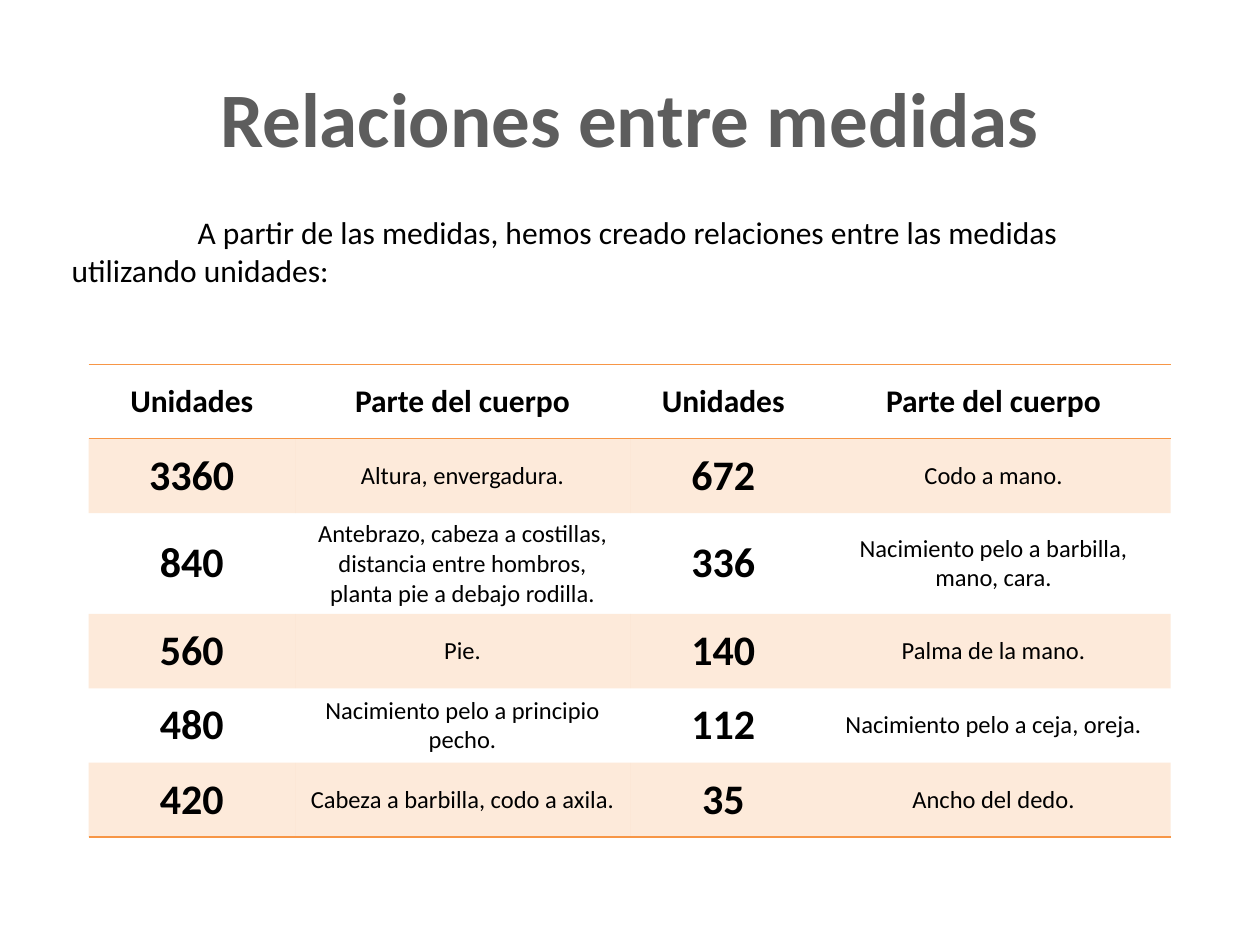
from dataclasses import dataclass
from typing import Any, NamedTuple

from lxml import etree
from pptx import Presentation
from pptx import util as u
from pptx.dml.color import RGBColor
from pptx.enum import text
from pptx.oxml import ns


@dataclass(frozen=True)
class Theme:
    font: str = "Calibri"
    title_color: str = "5D5D5D"
    ink: str = "000000"
    accent: str = "F79646"
    band_opacity: int = 20
    rule_width: float = 1
    title_size: int = 44
    body_size: int = 18
    units_size: int = 24
    part_size: int = 14


class Box(NamedTuple):
    left: float
    top: float
    width: float
    height: float

    def lengths(self) -> list[u.Length]:
        return [u.Pt(value) for value in self]


class Measure(NamedTuple):
    units: str
    part: str


THEME = Theme()
TITLE_BOX = Box(36, 21.6, 648, 90)
INTRO_BOX = Box(33.84, 118.08, 652.32, 51.12)
TABLE_BOX = Box(50.6, 208.2, 618.4, 255)
COLUMN_WIDTHS = (118, 191.5, 106.5, 202.4)
ROW_HEIGHT = 42.5
INTRO_INDENT = 72
PLAIN_TABLE_STYLE = "{2D5ABB26-0587-4C30-8999-92F81FD0307C}"

HEADING = Measure("Unidades", "Parte del cuerpo")
LARGE_MEASURES = [
    Measure("3360", "Altura, envergadura."),
    Measure("840", "Antebrazo, cabeza a costillas, distancia entre hombros, "
                   "planta pie a debajo rodilla."),
    Measure("560", "Pie."),
    Measure("480", "Nacimiento pelo a principio pecho."),
    Measure("420", "Cabeza a barbilla, codo a axila."),
]
SMALL_MEASURES = [
    Measure("672", "Codo a mano."),
    Measure("336", "Nacimiento pelo a barbilla, mano, cara."),
    Measure("140", "Palma de la mano."),
    Measure("112", "Nacimiento pelo a ceja, oreja."),
    Measure("35", "Ancho del dedo."),
]


def apply_format(target: Any, values: dict[str, Any]) -> None:
    for name, value in values.items():
        setattr(target, name, value)


def write(paragraph: Any, content: str, size: float, bold: bool = False,
          color: str = THEME.ink, alignment: Any = text.PP_ALIGN.CENTER) -> None:
    paragraph.alignment = alignment
    run = paragraph.add_run()
    run.text = content
    apply_format(run.font, {"name": THEME.font, "size": u.Pt(size), "bold": bold})
    run.font.color.rgb = RGBColor.from_string(color)


def add_title(slide: Any) -> None:
    title = slide.shapes.title
    apply_format(title, dict(zip(Box._fields, TITLE_BOX.lengths())))
    title.text_frame.vertical_anchor = text.MSO_ANCHOR.MIDDLE
    write(title.text_frame.paragraphs[0], "Relaciones entre medidas",
          THEME.title_size, True, THEME.title_color)


def add_intro(slide: Any) -> None:
    frame = slide.shapes.add_textbox(*INTRO_BOX.lengths()).text_frame
    frame.word_wrap = True
    paragraph = frame.paragraphs[0]
    write(paragraph, "A partir de las medidas, hemos creado relaciones entre las "
                     "medidas utilizando unidades:",
          THEME.body_size, alignment=text.PP_ALIGN.LEFT)
    paragraph._p.get_or_add_pPr().set("indent", str(u.Pt(INTRO_INDENT)))


def shade(cell: Any) -> None:
    """Fill the cell with the translucent accent colour."""
    cell.fill.solid()
    cell.fill.fore_color.rgb = RGBColor.from_string(THEME.accent)
    color = cell._tc.tcPr.find(".//" + ns.qn("a:srgbClr"))
    etree.SubElement(color, ns.qn("a:alpha"), val=str(THEME.band_opacity * 1000))


def add_rule(cell: Any, side: str) -> None:
    """Draw a border; call for lnB before lnT, as the schema orders lnT first."""
    line = etree.Element(ns.qn(f"a:{side}"), w=str(u.Pt(THEME.rule_width)))
    fill = etree.SubElement(line, ns.qn("a:solidFill"))
    etree.SubElement(fill, ns.qn("a:srgbClr"), val=THEME.accent)
    cell._tc.get_or_add_tcPr().insert(0, line)


def add_measure_table(slide: Any) -> None:
    rows = [HEADING + HEADING]
    rows += [large + small for large, small in zip(LARGE_MEASURES, SMALL_MEASURES)]
    frame = slide.shapes.add_table(len(rows), len(COLUMN_WIDTHS), *TABLE_BOX.lengths())
    table = frame.table
    table._tbl.tblPr.find(ns.qn("a:tableStyleId")).text = PLAIN_TABLE_STYLE
    for column, width in zip(table.columns, COLUMN_WIDTHS):
        column.width = u.Pt(width)
    for row_index, row in enumerate(rows):
        table.rows[row_index].height = u.Pt(ROW_HEIGHT)
        is_heading = row_index == 0
        for column_index, content in enumerate(row):
            cell = table.cell(row_index, column_index)
            is_units = column_index % 2 == 0
            cell.vertical_anchor = text.MSO_ANCHOR.MIDDLE
            size = THEME.units_size if is_units else THEME.part_size
            write(cell.text_frame.paragraphs[0], content,
                  THEME.body_size if is_heading else size, is_heading or is_units)
            if row_index % 2:
                shade(cell)
            else:
                cell.fill.background()
            if is_heading or row_index == len(rows) - 1:
                add_rule(cell, "lnB")
            if is_heading:
                add_rule(cell, "lnT")


def main() -> None:
    presentation = Presentation()
    apply_format(presentation, {"slide_width": u.Pt(720), "slide_height": u.Pt(540)})
    slide = presentation.slides.add_slide(presentation.slide_layouts[5])
    add_title(slide)
    add_intro(slide)
    add_measure_table(slide)
    presentation.save("out.pptx")


if __name__ == "__main__":
    main()
